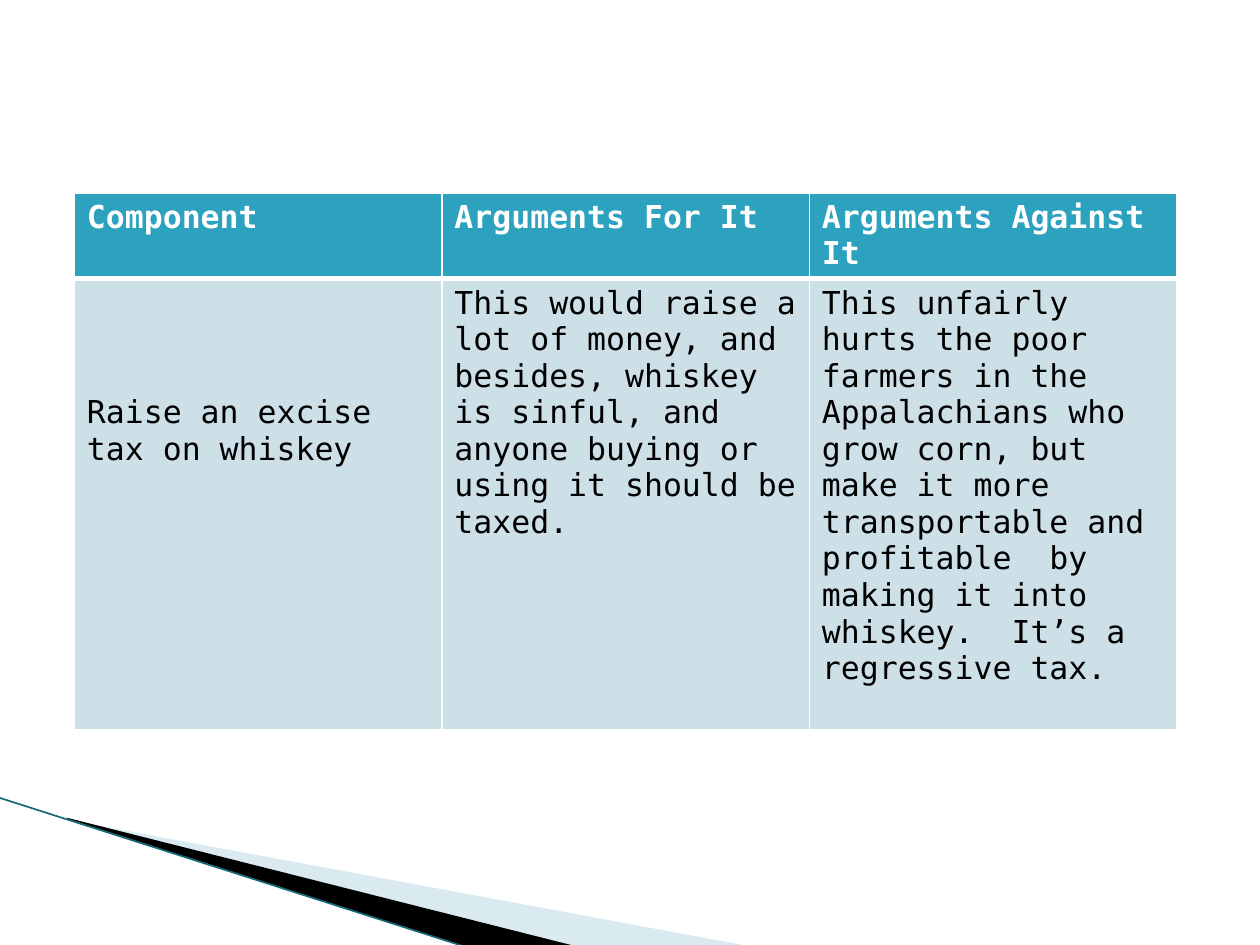
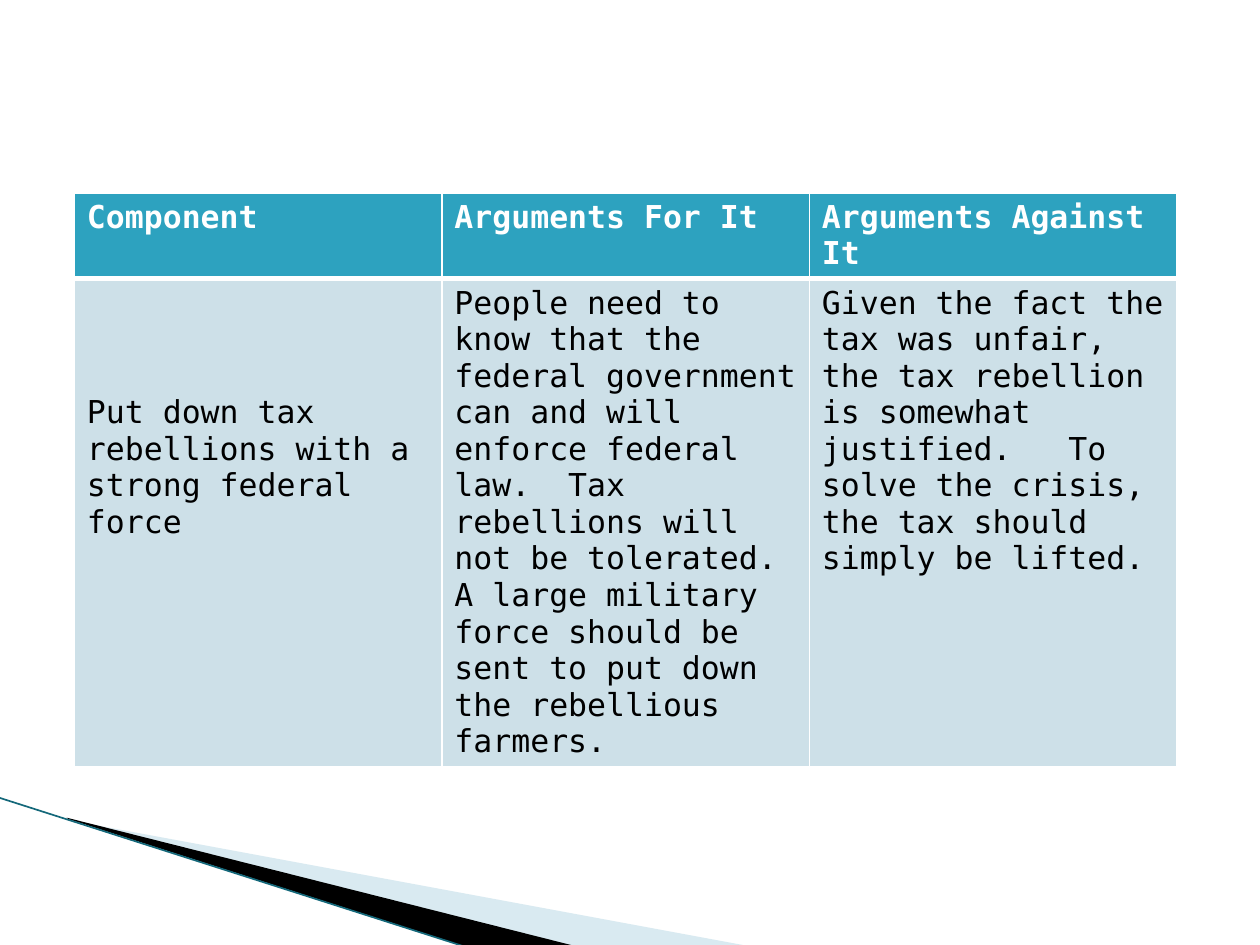
from dataclasses import dataclass
from lxml.etree import SubElement
from pptx import Presentation
from pptx.dml.color import RGBColor
from pptx.enum.shapes import MSO_CONNECTOR
from pptx.oxml.ns import qn
from pptx.util import Inches, Pt

HEADINGS = ["Component", "Arguments For It", "Arguments Against It"]
PROPOSALS = [
    {
        "cells": [
            "Raise an excise tax on whiskey",
            "This would raise a lot of money, and besides, whiskey is sinful, "
            "and anyone buying or using it should be taxed.",
            "This unfairly hurts the poor farmers in the Appalachians who grow "
            "corn, but make it more transportable and profitable  by making it "
            "into whiskey.  It’s a regressive tax.",
        ],
        "height": 3.58,
    },
    {
        "cells": [
            "Put down tax rebellions with a strong federal force",
            "People need to know that the federal government can and will "
            "enforce federal law.  Tax rebellions will not be tolerated.  "
            "A large military force should be sent to put down the rebellious "
            "farmers.",
            "Given the fact the tax was unfair, the tax rebellion is somewhat "
            "justified.   To solve the crisis, the tax should simply be lifted.",
        ],
        "height": 3.87,
    },
]


@dataclass(frozen=True)
class Theme:
    font: str = "DejaVu Sans Mono"
    size: int = 18
    white: str = "FFFFFF"
    black: str = "000000"
    header: str = "2DA2BF"
    body: str = "CDE0E8"
    pale_band: str = "A0CBDC"
    edge: str = "14687A"
    thin: int = 1
    thick: int = 3


THEME = Theme()
BANDS = [
    ([(0.55, 6.51), (5.95, 7.51), (4.56, 7.51), (0.55, 6.5)], THEME.pale_band, 40),
    ([(0.53, 6.49), (4.57, 7.51), (3.72, 7.52), (0.54, 6.5)], THEME.black, 100),
]
EDGE = [(-0.01, 6.33), (3.71, 7.52)]
TABLE_LEFT, TABLE_TOP, TABLE_WIDTH = 0.59, 1.53, 8.75
HEADER_HEIGHT = 0.68
COMPONENT_TOP_MARGIN = 0.92


def color(code):
    return RGBColor.from_string(code)


def draw_corner(page):
    for points, fill, opacity in BANDS:
        corners = [(Inches(x), Inches(y)) for x, y in points]
        builder = page.shapes.build_freeform(*corners[0])
        builder.add_line_segments(corners[1:], close=True)
        band = builder.convert_to_shape()
        band.shadow.inherit = False
        band.line.fill.background()
        band.fill.solid()
        band.fill.fore_color.rgb = color(fill)
        if opacity < 100:
            code = band.element.spPr.find(f"{qn('a:solidFill')}/{qn('a:srgbClr')}")
            SubElement(code, qn("a:alpha")).set("val", str(opacity * 1000))

    ends = [Inches(value) for point in EDGE for value in point]
    edge = page.shapes.add_connector(MSO_CONNECTOR.STRAIGHT, *ends)
    edge.line.color.rgb = color(THEME.edge)
    edge.line.width = Pt(0.95)
    SubElement(edge.element.spPr, qn("a:effectLst"))


def set_borders(cell, top, bottom):
    properties = cell._tc.get_or_add_tcPr()
    widths = {"L": THEME.thin, "R": THEME.thin, "T": top, "B": bottom}
    for side, width in widths.items():
        border = SubElement(properties, qn(f"a:ln{side}"), w=str(Pt(width)))
        fill = SubElement(border, qn("a:solidFill"))
        SubElement(fill, qn("a:srgbClr"), val=THEME.white)


def fill_cell(cell, text, is_header):
    top, bottom = (THEME.thin, THEME.thick) if is_header else (THEME.thick, THEME.thin)
    set_borders(cell, top, bottom)
    cell.fill.solid()
    cell.fill.fore_color.rgb = color(THEME.header if is_header else THEME.body)
    cell.text = text
    font = cell.text_frame.paragraphs[0].font
    font.name = THEME.font
    font.size = Pt(THEME.size)
    font.bold = is_header
    font.color.rgb = color(THEME.white if is_header else THEME.black)


def add_arguments(page, proposal):
    heights = [HEADER_HEIGHT, proposal["height"]]
    rows = [HEADINGS, proposal["cells"]]
    table = page.shapes.add_table(
        len(rows), len(HEADINGS), Inches(TABLE_LEFT), Inches(TABLE_TOP),
        Inches(TABLE_WIDTH), Inches(sum(heights)),
    ).table
    for row_index, (texts, height) in enumerate(zip(rows, heights)):
        table.rows[row_index].height = Inches(height)
        for column_index, text in enumerate(texts):
            fill_cell(table.cell(row_index, column_index), text, row_index == 0)
    table.cell(1, 0).margin_top = Inches(COMPONENT_TOP_MARGIN)


def main():
    deck = Presentation()
    deck.slide_width, deck.slide_height = Inches(10), Inches(7.5)
    blank = deck.slide_layouts.get_by_name("Blank")
    for proposal in PROPOSALS:
        page = deck.slides.add_slide(blank)
        draw_corner(page)
        add_arguments(page, proposal)
    deck.save("out.pptx")


if __name__ == "__main__":
    main()
